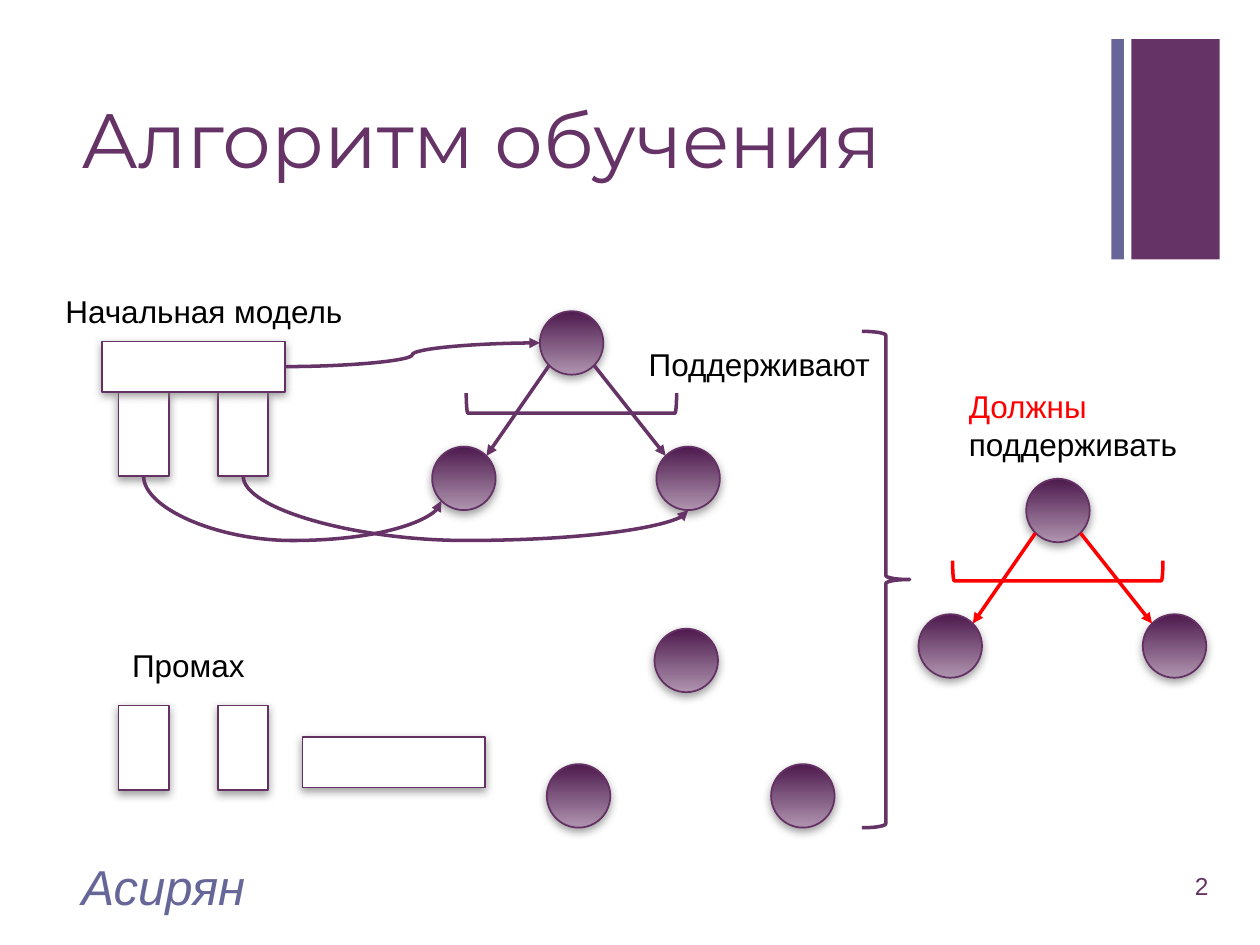
from lxml.etree import SubElement
from pptx import Presentation
from pptx.dml.color import RGBColor
from pptx.enum.shapes import MSO_CONNECTOR, MSO_SHAPE
from pptx.enum.text import MSO_ANCHOR, PP_ALIGN
from pptx.oxml.ns import qn
from pptx.util import Inches, Pt

PURPLE = RGBColor(0x66, 0x33, 0x66)
OUTLINE = RGBColor(0x65, 0x31, 0x65)
BLUE = RGBColor(0x66, 0x66, 0x99)
NODE_DARK = RGBColor(0x4D, 0x1A, 0x4D)
NODE_LIGHT = RGBColor(0xAF, 0x94, 0xAF)
RED = RGBColor(0xFF, 0, 0)
BLACK = RGBColor(0, 0, 0)
WHITE = RGBColor(0xFF, 0xFF, 0xFF)

# The slide is a grid of 100 columns by 75 rows; all lengths are in its cells
SLIDE_WIDTH, SLIDE_HEIGHT = Inches(10), Inches(7.5)
COLUMN, ROW = SLIDE_WIDTH / 100, SLIDE_HEIGHT / 75

NODE = 5.04                   # node diameter
APEX, RIGHT, DROP = 8.55, 17.8, 10.75  # node offsets inside a tree
RIM = NODE / 2 * 0.71         # offset of the diagonal rim points
LEG_WIDTH, LEG_HEIGHT, LEG_STEP = 4, 6.7, 7.9
BAR_WIDTH, BAR_HEIGHT = 14.5, 4
CURVE_DEPTH = 5.1


def cells(*lengths):
    return [round(length * (ROW if index % 2 else COLUMN))
            for index, length in enumerate(lengths)]


def add_text(slide, box, runs, size=18, font="Arial", italic=False,
             align=PP_ALIGN.LEFT, anchor=MSO_ANCHOR.TOP, spacing=None):
    frame = slide.shapes.add_textbox(*cells(*box)).text_frame
    frame.word_wrap = True
    frame.vertical_anchor = anchor
    paragraph = frame.paragraphs[0]
    paragraph.alignment = align
    paragraph.line_spacing = spacing
    for text, color in runs:
        run = paragraph.add_run()
        run.text = text
        run.font.size = Pt(size)
        run.font.name = font
        run.font.italic = italic
        run.font.color.rgb = color


def add_shape(shapes, kind, box, fill=None, line=None, weight=1, quarter_turn=False):
    """Place a shape so that it fills the box, also after a quarter turn."""
    left, top, width, height = box
    if quarter_turn:
        left, top = left + (width - height) / 2, top + (height - width) / 2
        width, height = height, width
    shape = shapes.add_shape(kind, *cells(left, top, width, height))
    shape.rotation = 90 if quarter_turn else 0
    shape.shadow.inherit = False
    if fill is None:
        shape.fill.background()
    else:
        shape.fill.solid()
        shape.fill.fore_color.rgb = fill
    if line is None:
        shape.line.fill.background()
    else:
        shape.line.color.rgb = line
        shape.line.width = Pt(weight)
    return shape


def add_shadow(shape):
    effects = shape.element.spPr.find(qn("a:effectLst"))
    shadow = SubElement(effects, qn("a:outerShdw"), blurRad=str(Pt(5)),
                        dist=str(Pt(2)), dir="5400000", rotWithShape="0")
    color = SubElement(shadow, qn("a:srgbClr"), val="808080")
    SubElement(color, qn("a:alpha"), val="75000")


def add_arrow(slide, start, end, color=PURPLE, kind=MSO_CONNECTOR.STRAIGHT):
    connector = slide.shapes.add_connector(kind, *cells(*start, *end))
    connector.line.color.rgb = color
    connector.line.width = Pt(2)
    SubElement(connector.line._get_or_add_ln(), qn("a:tailEnd"), type="triangle")
    SubElement(connector.element.spPr, qn("a:effectLst"))
    return connector


def add_hanging_curve(slide, start, end):
    """Curve that dips below both ends: a flipped connector turned by 270 degrees."""
    across, down = end[0] - start[0], end[1] - start[1]
    middle_x, middle_y = (start[0] + end[0]) / 2, (start[1] + end[1]) / 2
    connector = add_arrow(slide, (middle_x + down / 2, middle_y - across / 2),
                          (middle_x - down / 2, middle_y + across / 2),
                          kind=MSO_CONNECTOR.CURVE)
    properties = connector.element.spPr
    properties.find(qn("a:xfrm")).set("rot", "16200000")
    guides = properties.find(qn("a:prstGeom")).get_or_add_avLst()
    SubElement(guides, qn("a:gd"), name="adj1",
               fmla=f"val {round(CURVE_DEPTH / down * 100000)}")


def add_block(shapes, box, quarter_turn=False):
    add_shadow(add_shape(shapes, MSO_SHAPE.FLOWCHART_PROCESS, box, WHITE, OUTLINE,
                         quarter_turn=quarter_turn))


def add_legs(slide, left, top):
    group = slide.shapes.add_group_shape()
    for index in range(2):
        add_block(group.shapes, (left + index * LEG_STEP, top, LEG_WIDTH, LEG_HEIGHT))
    return group


def add_nodes(slide, left, top):
    for across, down in ((APEX, 0), (RIGHT, DROP), (0, DROP)):
        node = add_shape(slide.shapes, MSO_SHAPE.FLOWCHART_CONNECTOR,
                         (left + across, top + down, NODE, NODE), WHITE, OUTLINE)
        node.fill.gradient()
        node.fill.gradient_angle = 270
        for stop, color in zip(node.fill.gradient_stops, (NODE_DARK, NODE_LIGHT)):
            stop.color.rgb = color
        add_shadow(node)


def add_tree(slide, left, top, color):
    """Three nodes, two arrows from the apex and the bracket across them."""
    add_nodes(slide, left, top)
    center = NODE / 2
    for across, side in ((0, -1), (RIGHT, 1)):
        start = (left + APEX + center + side * RIM, top + center + RIM)
        end = (left + across + center - side * RIM, top + DROP + center - RIM)
        add_arrow(slide, start, end, color)
    add_shape(slide.shapes, MSO_SHAPE.RIGHT_BRACKET, (left + 2.7, top + 6.5, 16.7, 1.6),
              line=color, weight=2, quarter_turn=True)


def add_frame(slide):
    # Corner blocks, title and footer
    add_shape(slide.shapes, MSO_SHAPE.RECTANGLE, (89.8, 3.1, 7, 17.5), PURPLE)
    add_shape(slide.shapes, MSO_SHAPE.RECTANGLE, (88.2, 3.1, 1, 17.5), BLUE)
    add_text(slide, (5.5, 5.3, 82.6, 12.2), [("Алгоритм обучения", PURPLE)], size=44,
             font="Montserrat", anchor=MSO_ANCHOR.MIDDLE, spacing=0.9)
    add_text(slide, (90.8, 68.3, 6.1, 4), [("2", PURPLE)], size=14,
             align=PP_ALIGN.RIGHT, anchor=MSO_ANCHOR.MIDDLE)
    add_text(slide, (5.5, 68.3, 67, 4), [("Асирян", BLUE)], size=28, italic=True,
             anchor=MSO_ANCHOR.MIDDLE)


def add_initial_model(slide, left, top):
    # Table-like model, its tree, and the curves that map one to the other
    tree_left, tree_top = left + 26.2, top - 2.4
    model = add_legs(slide, left + 1.3, top + 4)
    add_block(model.shapes, (left, top, BAR_WIDTH, BAR_HEIGHT), quarter_turn=True)
    add_text(slide, (left - 3.9, top - 4.4, 26.1, 4), [("Начальная модель", BLACK)])
    add_tree(slide, tree_left, tree_top, PURPLE)
    add_arrow(slide, (left + BAR_WIDTH, top + BAR_HEIGHT / 2),
              (tree_left + APEX, tree_top + NODE / 2), kind=MSO_CONNECTOR.CURVE)
    center, base = NODE / 2, tree_top + DROP
    ends = ((tree_left + center - RIM, base + center + RIM),
            (tree_left + RIGHT + center, base + NODE))
    for index, end in enumerate(ends):
        start = (left + 1.3 + index * LEG_STEP + LEG_WIDTH / 2, top + 4 + LEG_HEIGHT)
        add_hanging_curve(slide, start, end)
    add_text(slide, (left + 42.4, top - 0.2, 26.1, 4), [("Поддерживают", BLACK)])


def add_miss(slide, left, top):
    # Separate blocks and unlinked nodes
    add_legs(slide, left, top)
    add_block(slide.shapes, (left + 14.6, top + 2.5, BAR_WIDTH, BAR_HEIGHT),
              quarter_turn=True)
    add_nodes(slide, left + 34, top - 6.1)
    add_text(slide, (left + 0.1, top - 5.2, 11.3, 4), [("Промах", BLACK)])


def add_conclusion(slide, left, top):
    # Brace over both cases and the tree that follows from them
    add_shape(slide.shapes, MSO_SHAPE.RIGHT_BRACE, (left, top, 3.8, 39.4),
              line=PURPLE, weight=2)
    add_tree(slide, left + 4.5, top + 11.7, RED)
    add_text(slide, (left + 7.5, top + 3.9, 26.1, 7.1),
             [("Должны", RED), (" поддерживать", BLACK)])


def main():
    presentation = Presentation()
    presentation.slide_width, presentation.slide_height = SLIDE_WIDTH, SLIDE_HEIGHT
    slide = presentation.slides.add_slide(presentation.slide_layouts[6])
    add_frame(slide)
    add_initial_model(slide, 8.1, 27.1)
    add_miss(slide, 9.4, 56)
    add_conclusion(slide, 68.4, 26.3)
    presentation.save("out.pptx")


if __name__ == "__main__":
    main()
